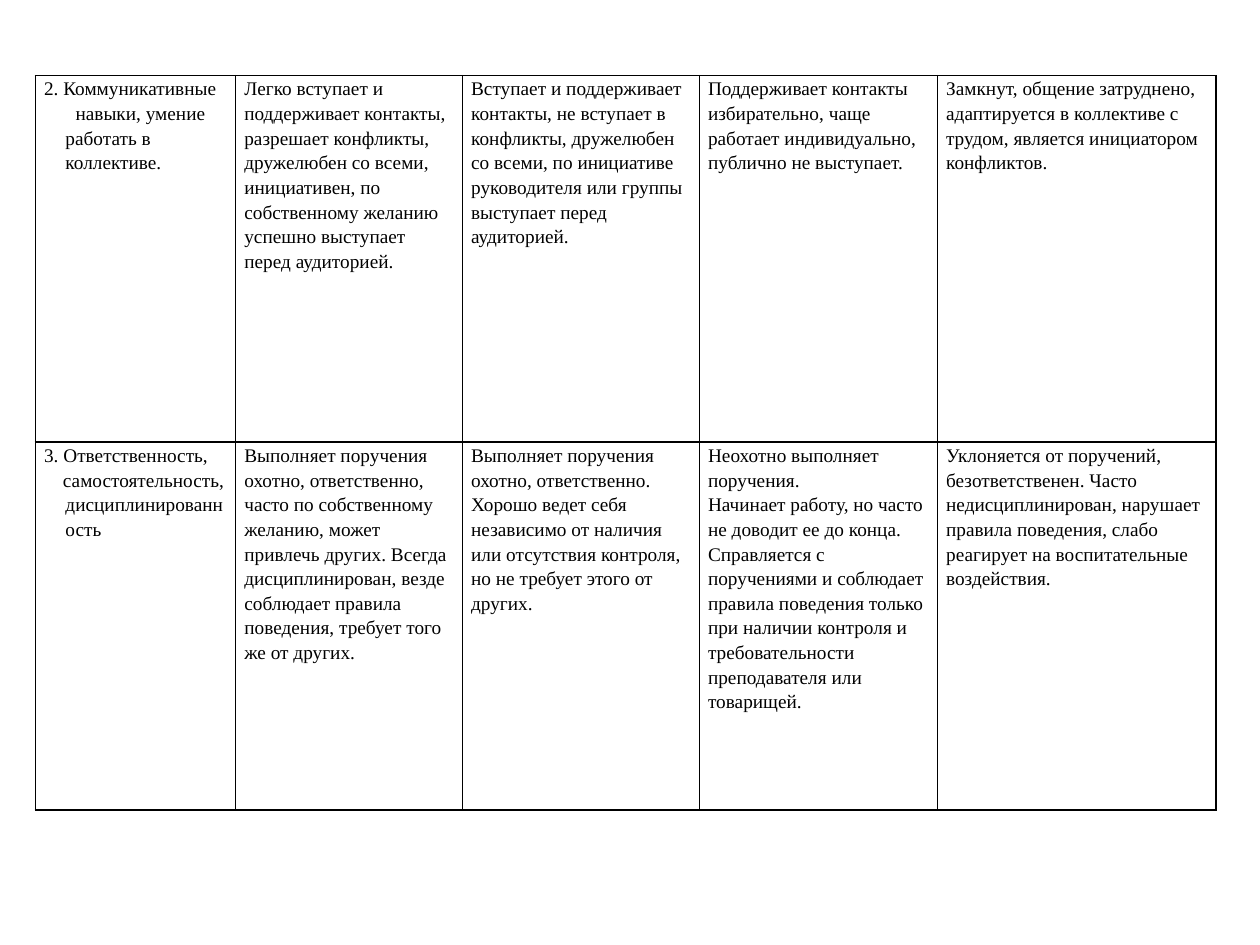
from lxml.etree import SubElement
from pptx import Presentation
from pptx.dml.color import RGBColor
from pptx.oxml.ns import qn
from pptx.util import Inches, Pt

COLORS = {"text": "000000", "border": "000000", "cell": "FFFFFF"}
FONT = "Times New Roman"
COLUMN_WIDTHS = [1.59, 1.8, 1.88, 1.89, 2.21]
ROW_HEIGHTS = [2.91, 2.92]
TABLE_LEFT, TABLE_TOP = 0.28, 0.6

# Each cell lists its paragraphs; a tuple adds left margin and first-line indent in inches.
ROWS = [
    [
        ["2. Коммуникативные", ("навыки, умение работать в коллективе.", 0.17, 0.08)],
        ["Легко вступает и поддерживает контакты, разрешает конфликты, дружелюбен со всеми, "
         "инициативен, по собственному желанию успешно выступает перед аудиторией."],
        ["Вступает и поддерживает контакты, не вступает в конфликты, дружелюбен со всеми, "
         "по инициативе руководителя или группы выступает перед аудиторией."],
        ["Поддерживает контакты избирательно, чаще работает индивидуально, "
         "публично не выступает."],
        ["Замкнут, общение затруднено, адаптируется в коллективе с трудом, "
         "является инициатором конфликтов."],
    ],
    [
        ["3. Ответственность,", ("самостоятельность,", 0.15, 0),
         ("дисциплинированность", 0.17, 0)],
        ["Выполняет поручения охотно, ответственно, часто по собственному желанию, может "
         "привлечь других. Всегда дисциплинирован, везде соблюдает правила поведения, "
         "требует того же от других."],
        ["Выполняет поручения охотно, ответственно. Хорошо ведет себя независимо от наличия "
         "или отсутствия контроля, но не требует этого от других."],
        ["Неохотно выполняет поручения.",
         "Начинает работу, но часто не доводит ее до конца.",
         "Справляется с поручениями и соблюдает правила поведения только при наличии "
         "контроля и требовательности преподавателя или товарищей."],
        ["Уклоняется от поручений, безответственен. Часто недисциплинирован, нарушает "
         "правила поведения, слабо реагирует на воспитательные воздействия."],
    ],
]


def add_borders(cell):
    properties = cell._tc.get_or_add_tcPr()
    for side in ("lnL", "lnR", "lnT", "lnB"):
        line = SubElement(properties, qn(f"a:{side}"), w=str(Pt(1)))
        fill = SubElement(line, qn("a:solidFill"))
        SubElement(fill, qn("a:srgbClr"), val=COLORS["border"])


def write_paragraph(paragraph, item):
    text, margin, indent = (item, 0, 0) if isinstance(item, str) else item
    paragraph.text = text
    paragraph.line_spacing = 1.15
    paragraph.font.size = Pt(11)
    paragraph.font.name = FONT
    paragraph.font.color.rgb = RGBColor.from_string(COLORS["text"])
    properties = paragraph._p.get_or_add_pPr()
    properties.set("marL", str(Inches(margin)))
    properties.set("indent", str(Inches(indent)))


def fill_cell(cell, items):
    cell.margin_left = cell.margin_right = Inches(0.07)
    cell.margin_top = cell.margin_bottom = 0
    add_borders(cell)
    cell.fill.solid()
    cell.fill.fore_color.rgb = RGBColor.from_string(COLORS["cell"])
    frame = cell.text_frame
    for index, item in enumerate(items):
        write_paragraph(frame.add_paragraph() if index else frame.paragraphs[0], item)


def main():
    presentation = Presentation()
    presentation.slide_width, presentation.slide_height = Inches(10), Inches(7.5)
    slide = presentation.slides.add_slide(presentation.slide_layouts[6])
    table = slide.shapes.add_table(
        len(ROWS), len(COLUMN_WIDTHS), Inches(TABLE_LEFT), Inches(TABLE_TOP),
        Inches(sum(COLUMN_WIDTHS)), Inches(sum(ROW_HEIGHTS))).table
    table.first_row = table.horz_banding = False
    for column, width in zip(table.columns, COLUMN_WIDTHS):
        column.width = Inches(width)
    for row, height, contents in zip(table.rows, ROW_HEIGHTS, ROWS):
        row.height = Inches(height)
        for cell, items in zip(row.cells, contents):
            fill_cell(cell, items)
    presentation.save("out.pptx")


if __name__ == "__main__":
    main()
